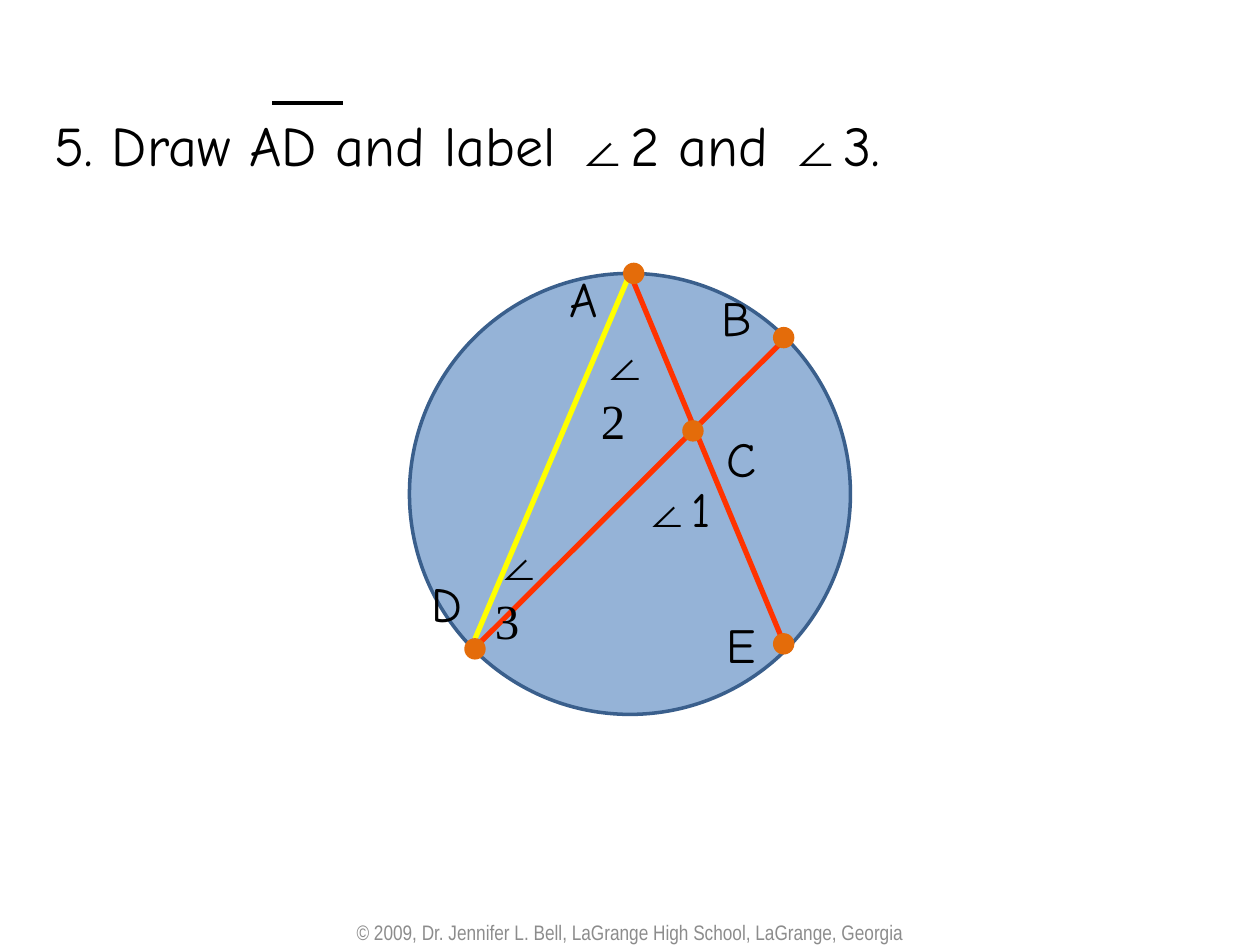
from lxml.etree import SubElement
from pptx import Presentation
from pptx.dml.color import RGBColor
from pptx.enum.shapes import MSO_CONNECTOR, MSO_SHAPE
from pptx.enum.text import MSO_ANCHOR, MSO_AUTO_SIZE, PP_ALIGN
from pptx.oxml.ns import qn
from pptx.util import Inches, Pt

HAND, SERIF, NARROW = "Comic Neue", "Times New Roman", "Arial Narrow"
BLACK, GREY, RED, YELLOW = "000000", "8C8C8C", "FF3300", "FFFF00"
BLUE, NAVY, ORANGE = "95B3D7", "3A5F8C", "E46C0A"
DOT_SIZE = 0.17


def color(value):
    """Turn a hex string into a colour."""
    return RGBColor.from_string(value)


class GeometrySlide:
    """Hold the current slide and draw styled elements on it."""

    def __init__(self, deck):
        """Add a title-only slide to the deck."""
        self.page = deck.slides.add_slide(deck.slide_layouts[5])

    def fill_text(self, box, spans, size, ink=BLACK, align=PP_ALIGN.LEFT):
        """Fill a box with one paragraph of (text, font) spans."""
        frame = box.text_frame
        frame.word_wrap = True
        frame.auto_size = MSO_AUTO_SIZE.NONE
        frame.vertical_anchor = MSO_ANCHOR.TOP
        para = frame.paragraphs[0]
        para.alignment = align
        for text, font in spans:
            span = para.add_run()
            span.text = text
            span.font.name = font
            span.font.size = Pt(size)
            span.font.color.rgb = color(ink)
        return para

    def title(self, spans, left, top, width, height, hanging):
        """Place the title with a hanging indent."""
        box = self.page.shapes.title
        box.left, box.top = Inches(left), Inches(top)
        box.width, box.height = Inches(width), Inches(height)
        properties = self.fill_text(box, spans, 32)._p.get_or_add_pPr()
        properties.set("marL", str(Inches(hanging)))
        properties.set("indent", str(-Inches(hanging)))

    def text(self, spans, left, top, width=0.5, height=0.57, size=28, **style):
        """Add a text box."""
        box = self.page.shapes.add_textbox(
            Inches(left), Inches(top), Inches(width), Inches(height))
        self.fill_text(box, spans, size, **style)

    def circle(self, center, diameter, fill, outline=None):
        """Add a circle around a center point."""
        left, top = (Inches(value - diameter / 2) for value in center)
        shape = self.page.shapes.add_shape(
            MSO_SHAPE.OVAL, left, top, Inches(diameter), Inches(diameter))
        shape.shadow.inherit = False
        shape.fill.solid()
        shape.fill.fore_color.rgb = color(fill)
        if outline:
            shape.line.color.rgb = color(outline)
            shape.line.width = Pt(2)
        else:
            shape.line.fill.background()

    def segment(self, start, end, ink, width=3):
        """Add a straight line between two points."""
        line = self.page.shapes.add_connector(
            MSO_CONNECTOR.STRAIGHT, *(Inches(value) for value in start + end))
        line.line.color.rgb = color(ink)
        line.line.width = Pt(width)
        SubElement(line._element.spPr, qn("a:effectLst"))


def main():
    """Build the circle geometry slide."""
    deck = Presentation()
    deck.slide_width, deck.slide_height = Inches(10), Inches(7.5)
    slide = GeometrySlide(deck)

    slide.title(
        [("5. Draw AD and label ", HAND), ("∠", SERIF), ("2 and ", HAND),
         ("∠", SERIF), ("3.", HAND)],
        0.33, 0.83, 9.67, 0.64, hanging=0.37)

    slide.circle((5, 3.92), 3.5, BLUE, NAVY)
    circle_top = (5, 2.17)
    slide.segment((3.76, 5.15), (6.24, 2.68), RED)
    slide.segment((6.24, 5.15), circle_top, RED)
    slide.segment(circle_top, (3.77, 5.07), YELLOW)
    slide.segment((2.16, 0.82), (2.72, 0.82), BLACK, 2.25)

    points = {
        "A": ((5.03, 2.17), (4.42, 2.08)),
        "B": ((6.22, 2.68), (5.63, 2.23)),
        "C": ((5.5, 3.42), (5.67, 3.35)),
        "D": ((3.77, 5.15), (3.33, 4.5)),
        "E": ((6.22, 5.11), (5.67, 4.83)),
    }
    for name, (center, label) in points.items():
        slide.circle(center, DOT_SIZE, ORANGE)
        slide.text([(name, HAND)], *label)

    angles = [
        ([("∠", SERIF), ("1", HAND)], 5, 3.75),
        ([("∠2", SERIF)], 4.67, 2.58),
        ([("∠3", SERIF)], 3.83, 4.17),
    ]
    for spans, left, top in angles:
        slide.text(spans, left, top, width=0.75)

    slide.text(
        [("© 2009, Dr. Jennifer L. Bell, LaGrange High School, LaGrange, Georgia",
          NARROW)],
        0, 7.25, 10, 0.25, size=12, ink=GREY, align=PP_ALIGN.CENTER)
    deck.save("out.pptx")


if __name__ == "__main__":
    main()
